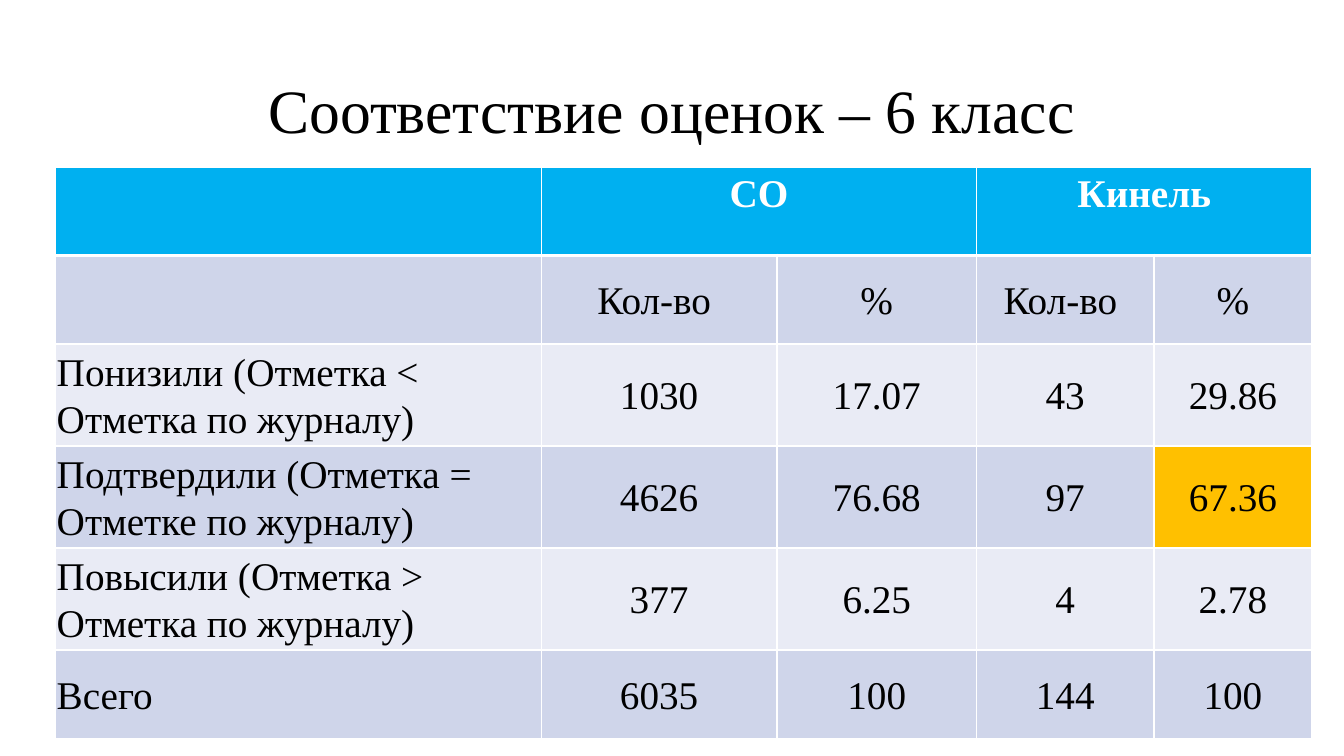
"""Build the slide comparing sixth-grade marks with the class register."""
from dataclasses import dataclass

from lxml import etree
from pptx import Presentation, util as u
from pptx.dml.color import RGBColor
from pptx.enum import text as t
from pptx.oxml.ns import qn

HUES = {
    "black": "000000", "white": "FFFFFF", "head": "00B0F0",
    "dark": "CFD5EA", "light": "E9EBF5", "mark": "FFC000",
}
FONT = "Times New Roman"
COLS = (12.24, 5.94, 5.03, 4.47, 3.98)
LEFT, TOP = 1.4, 4.21


@dataclass
class Row:
    """Hold the words, height and band colour of one table row."""
    words: tuple[str, ...]
    high: float
    band: str


ROWS = (
    Row(("", "СО", "", "Кинель", ""), 2.23, "head"),
    Row(("", "Кол-во ", "%", "Кол-во ", "%"), 2.23, "dark"),
    Row(("Понизили (Отметка < Отметка по журналу)",
         "1030", "17.07", "43", "29.86"), 2.57, "light"),
    Row(("Подтвердили (Отметка = Отметке по журналу)",
         "4626", "76.68", "97", "67.36"), 2.57, "dark"),
    Row(("Повысили (Отметка > Отметка по журналу)",
         "377", "6.25", "4", "2.78"), 2.57, "light"),
    Row(("Всего", "6035", "100", "144", "100"), 2.23, "dark"),
)
MARKED = (3, 4)


def style(para, size: float, hue: str, bold: bool = False) -> None:
    """Format every run of a paragraph."""
    for run in para.runs:
        font = run.font
        font.name, font.size, font.bold = FONT, u.Pt(size), bold
        font.color.rgb = RGBColor.from_string(HUES[hue])


def edge(cell, sides: dict[str, float]) -> None:
    """Give a cell white borders with the widths listed by side."""
    props = cell._tc.get_or_add_tcPr()
    for side, width in sides.items():
        line = etree.SubElement(props, qn(f"a:ln{side}"), w=str(u.Pt(width)))
        fill = etree.SubElement(line, qn("a:solidFill"))
        etree.SubElement(fill, qn("a:srgbClr"), val=HUES["white"])


def fill_cell(cell, row: int, col: int) -> None:
    """Write and format one table cell."""
    item = ROWS[row]
    head = row == 0
    edge(cell, {"L": 1, "R": 1, "T": 3 if row == 1 else 1, "B": 3 if head else 1})
    cell.fill.solid()
    hue = "mark" if (row, col) == MARKED else item.band
    cell.fill.fore_color.rgb = RGBColor.from_string(HUES[hue])
    if not item.words[col]:
        return
    cell.text_frame.text = item.words[col]
    para = cell.text_frame.paragraphs[0]
    para.alignment = t.PP_ALIGN.CENTER if col else t.PP_ALIGN.LEFT
    style(para, 28, "white" if head else "black", head)
    if not head:
        cell.vertical_anchor = t.MSO_ANCHOR.MIDDLE
        cell.margin_left = cell.margin_right = u.Cm(0.03)
        cell.margin_top = cell.margin_bottom = u.Cm(0.01)
        para.line_spacing = 1.07
        para.space_after = u.Pt(8)


def add_title(slide) -> None:
    """Add the centred slide title."""
    box = slide.shapes.add_textbox(u.Cm(2.33), u.Cm(1.01), u.Cm(29.21), u.Cm(3.68))
    frame = box.text_frame
    frame.word_wrap = True
    frame.vertical_anchor = t.MSO_ANCHOR.MIDDLE
    frame.text = "Соответствие оценок – 6 класс"
    para = frame.paragraphs[0]
    para.alignment = t.PP_ALIGN.CENTER
    para.line_spacing = 0.9
    style(para, 44, "black")


def add_marks(slide) -> None:
    """Add the table of marks."""
    high = sum(item.high for item in ROWS)
    frame = slide.shapes.add_table(len(ROWS), len(COLS), u.Cm(LEFT), u.Cm(TOP),
                                   u.Cm(sum(COLS)), u.Cm(high))
    table = frame.table
    for col in (1, 3):
        table.cell(0, col).merge(table.cell(0, col + 1))
    for col, width in enumerate(COLS):
        table.columns[col].width = u.Cm(width)
    for row, item in enumerate(ROWS):
        table.rows[row].height = u.Cm(item.high)
        for col in range(len(COLS)):
            cell = table.cell(row, col)
            if not cell.is_spanned:
                fill_cell(cell, row, col)


def main() -> None:
    """Create and save the deck."""
    deck = Presentation()
    deck.slide_width, deck.slide_height = u.Cm(33.87), u.Cm(19.05)
    slide = deck.slides.add_slide(deck.slide_layouts[6])
    add_title(slide)
    add_marks(slide)
    deck.save("out.pptx")


if __name__ == "__main__":
    main()
